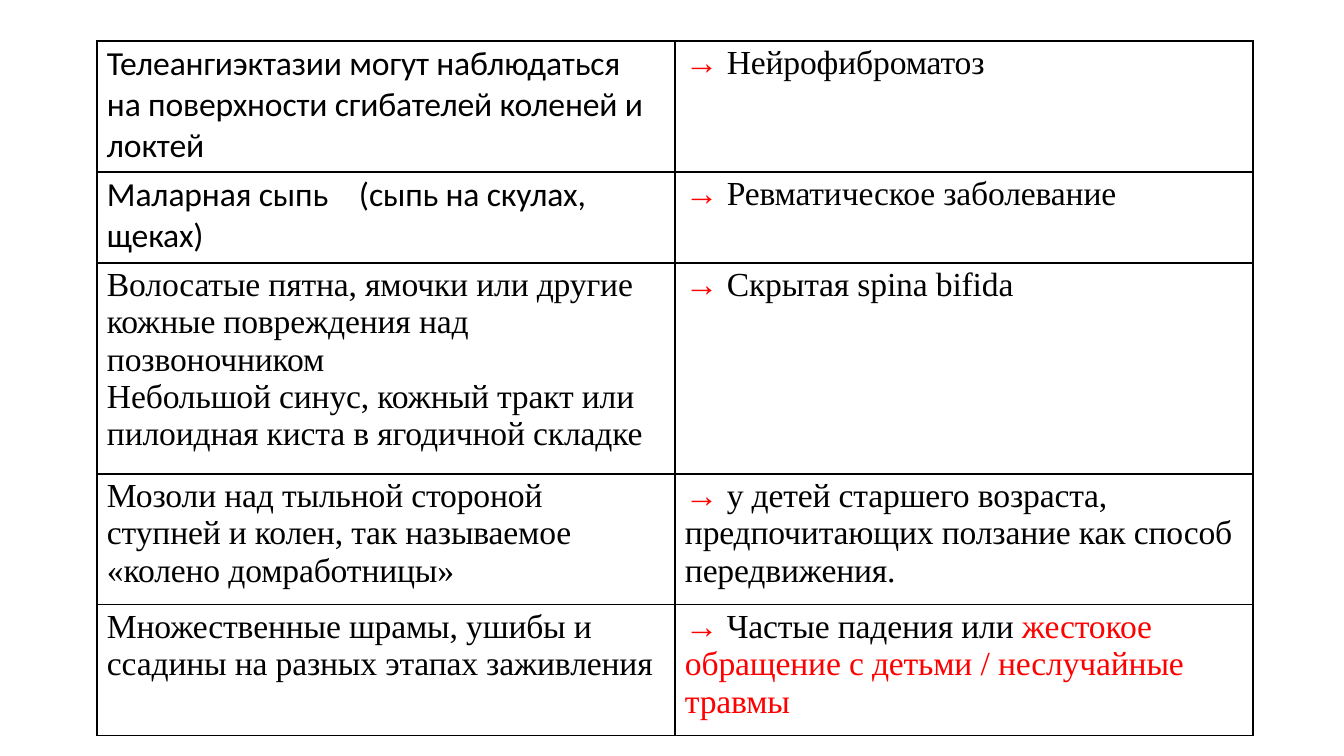
from dataclasses import dataclass

from lxml import etree
from pptx import Presentation
from pptx.dml.color import RGBColor
from pptx.oxml.ns import qn
from pptx.util import Emu, Pt

SCALE = 914400 / 100.8
SERIF, SANS = "Times New Roman", "Calibri"
BLACK, RED = "000000", "FF0000"
INDENT, TAB = 10, 248
LEFT, TOP, COL = 97, 41, 578


@dataclass(frozen=True)
class Sign:
    height: int
    signs: tuple[str, ...]
    causes: tuple[str, ...]
    alert: str = ""
    font: str = SERIF


ROWS = (
    Sign(131, ("Телеангиэктазии могут наблюдаться\vна поверхности сгибателей коленей и локтей",),
         ("Нейрофиброматоз",), font=SANS),
    Sign(91, ("Маларная сыпь\t(сыпь на скулах,", "щеках)"),
         ("Ревматическое заболевание",), font=SANS),
    Sign(211, ("Волосатые пятна, ямочки или другие кожные повреждения над",
               "позвоночником",
               "Небольшой синус, кожный тракт или пилоидная киста в ягодичной складке"),
         ("Скрытая spina bifida",)),
    Sign(131, ("Мозоли над тыльной стороной", "ступней и колен, так называемое",
               "«колено домработницы»"),
         ("у детей старшего возраста,",
          "предпочитающих ползание как способ передвижения.")),
    Sign(131, ("Множественные шрамы, ушибы и", "ссадины на разных этапах заживления"),
         ("Частые падения или ",),
         alert="жестокое обращение с детьми / неслучайные травмы"),
)


def px(n: int) -> Emu:
    return Emu(round(n * SCALE))


def paint(hue: str) -> RGBColor:
    return RGBColor.from_string(hue)


def write(para, text: str, *, font: str = SERIF, hue: str = BLACK,
          bold: bool = False) -> None:
    """Add text to a paragraph; a vertical tab becomes a line break."""
    for i, part in enumerate(text.split("\v")):
        if i:
            para.add_line_break()
        run = para.add_run()
        run.text = part
        run.font.name = font
        run.font.size = Pt(24)
        run.font.bold = bold
        run.font.color.rgb = paint(hue)
        run.font._element.set("spc", "-10")


def start(cell, i: int, gap: float):
    """Return the paragraph at index i of a cell, spaced and indented."""
    frame = cell.text_frame
    para = frame.add_paragraph() if i else frame.paragraphs[0]
    para.line_spacing = 1.0
    para.space_before = Pt(0 if i else gap)
    props = para._p.get_or_add_pPr()
    props.set("marL", str(px(INDENT)))
    props.set("indent", "0")
    return para


def add_tab(para) -> None:
    tabs = etree.SubElement(para._p.get_or_add_pPr(), qn("a:tabLst"))
    etree.SubElement(tabs, qn("a:tab"), pos=str(px(TAB)), algn="l")


def frame_cell(cell, top: int) -> None:
    """Set margins, thin black borders and no fill."""
    cell.margin_left = cell.margin_right = cell.margin_bottom = 0
    cell.margin_top = px(top)
    props = cell._tc.get_or_add_tcPr()
    for side in ("lnL", "lnR", "lnT", "lnB"):
        line = etree.SubElement(props, qn(f"a:{side}"), w=str(Pt(1)))
        fill = etree.SubElement(line, qn("a:solidFill"))
        etree.SubElement(fill, qn("a:srgbClr"), val=BLACK)
    cell.fill.background()


def fill_row(table, i: int, row: Sign) -> None:
    left, right = table.cell(i, 0), table.cell(i, 1)
    sans = row.font == SANS
    frame_cell(left, 3 if sans else 4)
    frame_cell(right, 4)
    for j, text in enumerate(row.signs):
        para = start(left, j, 2 if sans else 2.8)
        if "\t" in text:
            add_tab(para)
        write(para, text, font=row.font)
    for j, text in enumerate(row.causes):
        para = start(right, j, 2.8)
        if j == 0:
            write(para, "→ ", hue=RED, bold=True)
        write(para, text)
    if row.alert:
        write(para, row.alert, hue=RED)


def main() -> None:
    deck = Presentation()
    deck.slide_width, deck.slide_height = px(1344), px(756)
    slide = deck.slides.add_slide(deck.slide_layouts[6])
    height = sum(row.height for row in ROWS)
    table = slide.shapes.add_table(
        len(ROWS), 2, px(LEFT), px(TOP), px(2 * COL), px(height)).table
    table.first_row = table.horz_banding = False
    for col in table.columns:
        col.width = px(COL)
    for i, row in enumerate(ROWS):
        table.rows[i].height = px(row.height)
        fill_row(table, i, row)
    deck.save("out.pptx")


if __name__ == "__main__":
    main()
